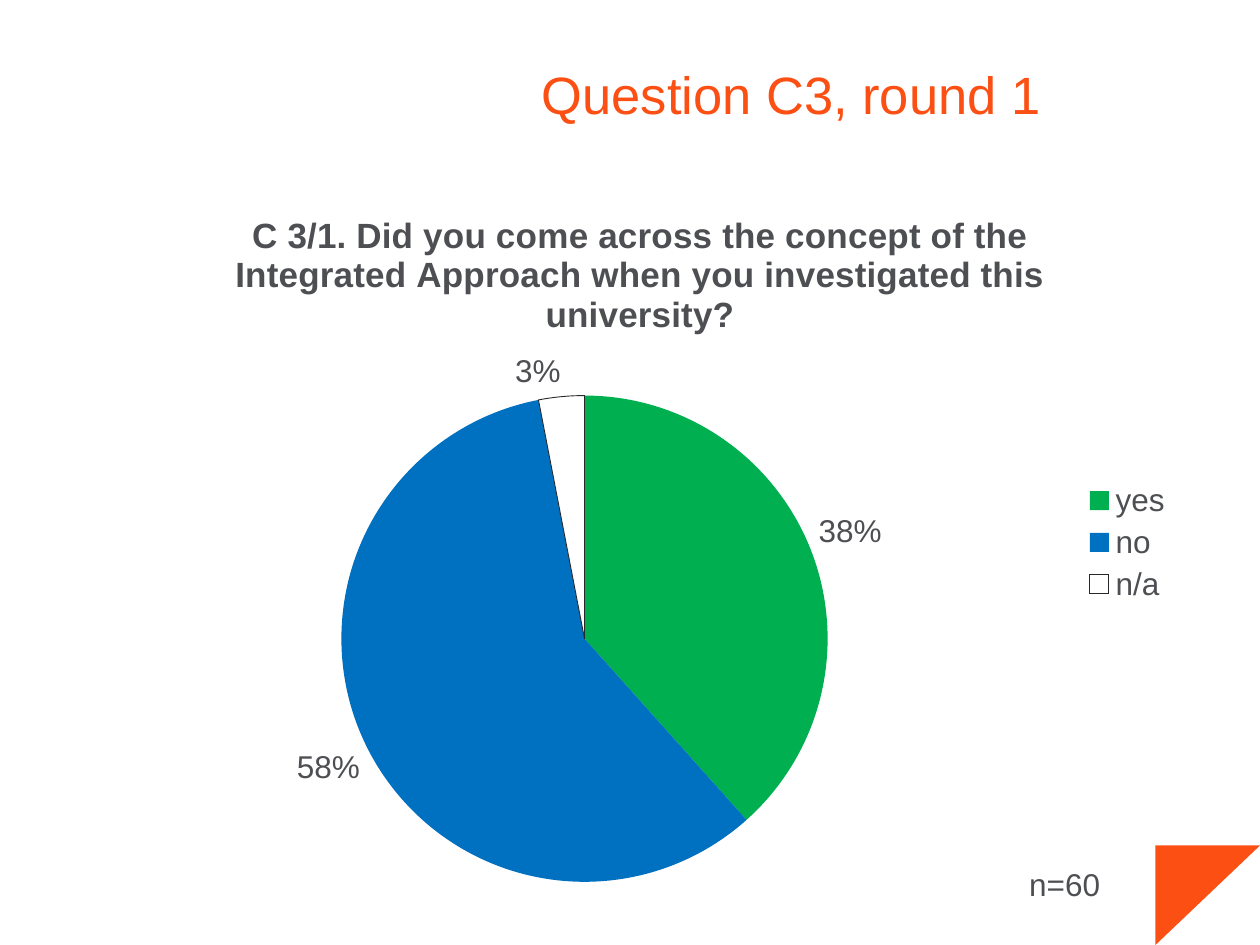
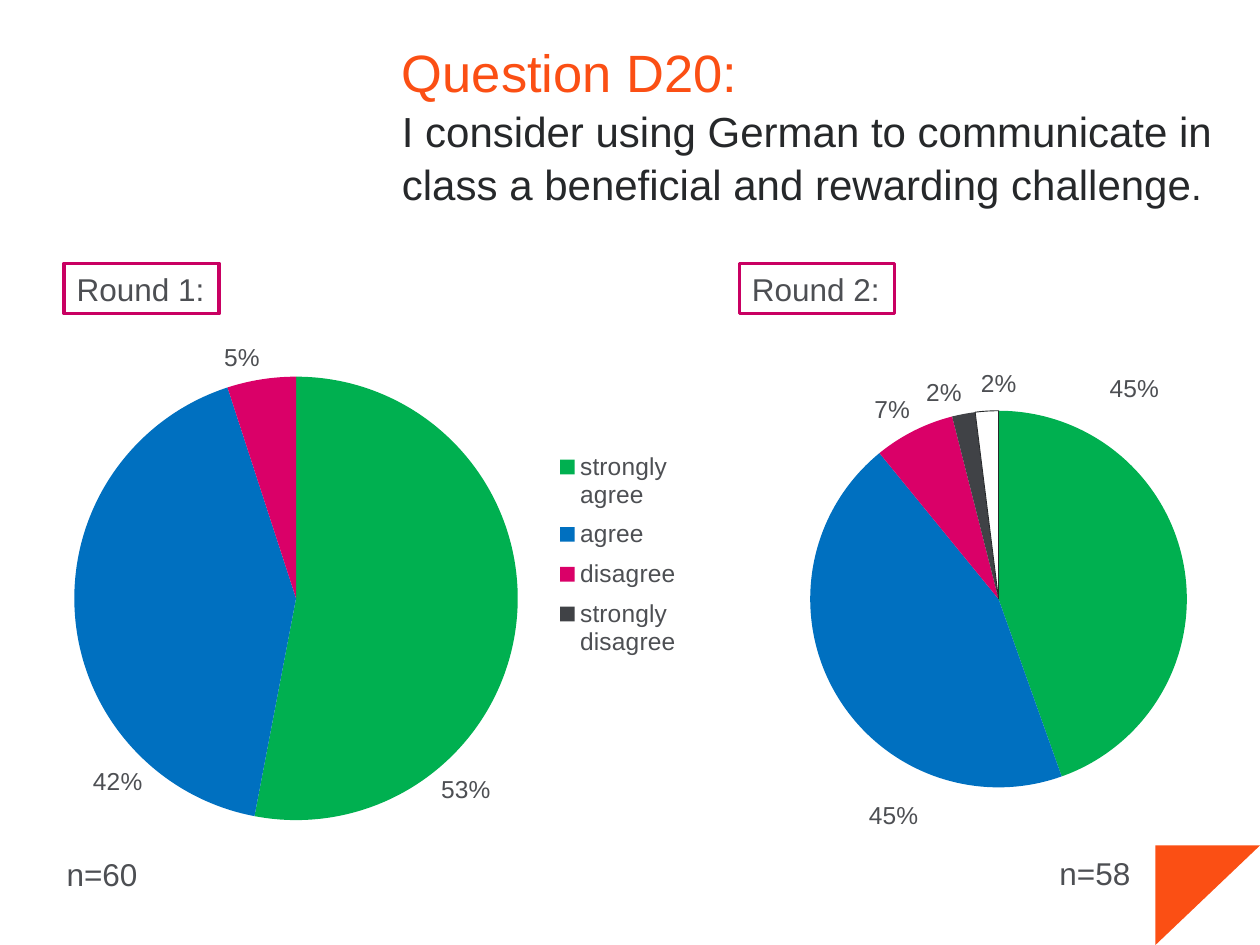
import copy

import lxml.etree
import pptx
import pptx.chart.data
import pptx.dml.color
import pptx.enum.chart
import pptx.enum.shapes
import pptx.enum.text
import pptx.oxml.ns
import pptx.util

Inches = pptx.util.Inches
Pt = pptx.util.Pt
RGBColor = pptx.dml.color.RGBColor
qn = pptx.oxml.ns.qn

ORANGE = RGBColor(0xFB, 0x4F, 0x14)
GRAY = RGBColor(0x4D, 0x4F, 0x53)
BLACK = RGBColor(0x26, 0x28, 0x2A)
FRAME = RGBColor(0xC9, 0x00, 0x62)
GREEN = RGBColor(0x00, 0xB0, 0x50)
BLUE = RGBColor(0x00, 0x70, 0xC0)
PINK = RGBColor(0xDA, 0x00, 0x68)
DARK = RGBColor(0x40, 0x42, 0x46)
WHITE = RGBColor(0xFF, 0xFF, 0xFF)

FONT = "Arial"
NOTE_SIZE = (0.77, 0.4)
ROUND_SIZE = (1.23, 0.4)

SLIDES = [
    {
        "title_area": (4.3, 0.47, 4.86, 0.56),
        "title": [[("Question C3, round 1", 30, ORANGE)]],
        "charts": [
            {
                "area": (0.75, 1.47, 8.66, 5.67),
                "pie": (2.71, 3.14, 3.86),
                "title": "C 3/1. Did you come across the concept of the Integrated "
                         "Approach when you investigated this university?",
                "answers": [("yes", 38, GREEN), ("no", 58, BLUE), ("n/a", 3, WHITE)],
                "label_size": 18,
                "legend_size": 18,
            },
        ],
        "rounds": [],
        "notes": [("n=60", 8.07, 6.82)],
    },
    {
        "title_area": (3.19, 0.29, 6.46, 1.5),
        "title": [
            [("Question D20:", 30, ORANGE)],
            [("I consider using German to communicate in class a beneficial "
              "and rewarding challenge", 24, BLACK), (".", 22, BLACK)],
        ],
        "charts": [
            {
                "area": (5.94, 2.57, 4.06, 4.09),
                "pie": (6.43, 3.26, 2.99),
                "answers": [("1", 45, GREEN), ("2", 45, BLUE), ("3", 7, PINK),
                            ("4", 2, DARK), ("5", 2, WHITE)],
                "label_size": 14,
                "label_shifts": {0: (-0.65, -1.29), 1: (0.72, 0.85), 4: (0.1, -0.05)},
            },
            {
                "area": (0, 2.57, 5.83, 4.1),
                "pie": (0.59, 2.99, 3.52),
                "answers": [("strongly agree", 53, GREEN), ("agree", 42, BLUE),
                            ("disagree", 5, PINK), ("strongly disagree", None, DARK)],
                "label_size": 14,
                "label_shifts": {0: (-0.66, 1.24), 1: (0.6, 1.34)},
                "legend_size": 14,
                "legend_area": (4.38, 3.5, 1.05, 1.8),
            },
        ],
        "rounds": [("Round 1:", 0.51, 2.09), ("Round 2:", 5.87, 2.09)],
        "notes": [("n=60", 0.43, 6.74), ("n=58", 8.31, 6.73)],
    },
]


def style_font(font, size, color=GRAY, bold=False):
    font.name = FONT
    font.size = Pt(size)
    font.bold = bold
    font.color.rgb = color


def add_corner(page):
    corner = page.shapes.add_shape(
        pptx.enum.shapes.MSO_SHAPE.RIGHT_TRIANGLE,
        Inches(9.19), Inches(6.69), Inches(0.79), Inches(0.83))
    corner.rotation = 90
    corner.shadow.inherit = False
    corner.fill.solid()
    corner.fill.fore_color.rgb = ORANGE
    corner.line.fill.background()


def add_title(page, area, lines):
    frame = page.shapes.add_textbox(*map(Inches, area)).text_frame
    frame.word_wrap = True
    frame.margin_left = frame.margin_right = frame.margin_top = frame.margin_bottom = 0
    para = frame.paragraphs[0]
    para.line_spacing = 1.05
    for number, line in enumerate(lines):
        if number:
            para.add_line_break()
        for text, size, color in line:
            span = para.add_run()
            span.text = text
            style_font(span.font, size, color)


def add_caption(page, text, left, top, size, framed=False):
    box = page.shapes.add_textbox(*map(Inches, (left, top, *size)))
    frame = box.text_frame
    frame.word_wrap = False
    frame.auto_size = pptx.enum.text.MSO_AUTO_SIZE.SHAPE_TO_FIT_TEXT
    frame.text = text
    style_font(frame.paragraphs[0].runs[0].font, 18)
    if framed:
        box.line.color.rgb = FRAME
        box.line.width = Pt(2)


def set_layout(parent, index, values, inner=False):
    for old in parent.findall(qn("c:layout")):
        parent.remove(old)
    layout = lxml.etree.Element(qn("c:layout"))
    manual = lxml.etree.SubElement(layout, qn("c:manualLayout"))
    settings = [("layoutTarget", "inner")] if inner else []
    if len(values) == 4:
        settings += [("xMode", "edge"), ("yMode", "edge")]
    settings += [(name, f"{value:.4f}") for name, value in zip("xywh", values)]
    for name, value in settings:
        lxml.etree.SubElement(manual, qn("c:" + name)).set("val", value)
    parent.insert(index, layout)


def share_of(area, part):
    left, top, width, height = area
    x, y, w, h = part
    return (x - left) / width, (y - top) / height, w / width, h / height


def style_labels(series, size, shifts, area):
    labels = series.data_labels
    labels.show_value = True
    labels.number_format = '0"%"'
    labels.number_format_is_linked = False
    labels.position = pptx.enum.chart.XL_LABEL_POSITION.OUTSIDE_END
    style_font(labels.font, size)
    group = series._element.find(qn("c:dLbls"))
    leader = group.find(qn("c:showLeaderLines"))
    if leader is not None:
        leader.set("val", "0")
    shared = [child for child in group if child is not leader]
    for place, (point, (across, down)) in enumerate(shifts.items()):
        label = lxml.etree.Element(qn("c:dLbl"))
        lxml.etree.SubElement(label, qn("c:idx")).set("val", str(point))
        set_layout(label, 1, (across / area[2], down / area[3]))
        label.extend(copy.deepcopy(shared))
        group.insert(place, label)


def add_pie(page, content):
    names, values, colors = zip(*content["answers"])
    data = pptx.chart.data.CategoryChartData()
    data.categories = names
    data.add_series("Series 1", values)
    area = content["area"]
    chart = page.shapes.add_chart(
        pptx.enum.chart.XL_CHART_TYPE.PIE, *map(Inches, area), data).chart
    style_font(chart.font, 18)

    chart.has_title = "title" in content
    if chart.has_title:
        frame = chart.chart_title.text_frame
        frame.text = content["title"]
        style_font(frame.paragraphs[0].runs[0].font, 20, bold=True)
        chart.chart_title.include_in_layout = False

    chart.has_legend = "legend_size" in content
    if chart.has_legend:
        legend = chart.legend
        legend.position = pptx.enum.chart.XL_LEGEND_POSITION.RIGHT
        legend.include_in_layout = False
        style_font(legend.font, content["legend_size"])
        if "legend_area" in content:
            set_layout(legend._element, 1, share_of(area, content["legend_area"]))

    plot = chart.plots[0]
    plot.vary_by_categories = True
    series = plot.series[0]
    for number, color in enumerate(colors):
        look = series.points[number].format
        look.fill.solid()
        look.fill.fore_color.rgb = color
        if color == WHITE:
            look.line.color.rgb = BLACK
            look.line.width = Pt(0.5)
        else:
            look.line.fill.background()
    style_labels(series, content["label_size"], content.get("label_shifts", {}), area)

    left, top, diameter = content["pie"]
    plot_area = chart._chartSpace.find(".//" + qn("c:plotArea"))
    set_layout(plot_area, 0, share_of(area, (left, top, diameter, diameter)), inner=True)


def main():
    deck = pptx.Presentation()
    deck.slide_width = Inches(10)
    deck.slide_height = Inches(7.5)
    for content in SLIDES:
        page = deck.slides.add_slide(deck.slide_layouts[6])
        add_corner(page)
        add_title(page, content["title_area"], content["title"])
        for pie in content["charts"]:
            add_pie(page, pie)
        for text, left, top in content["rounds"]:
            add_caption(page, text, left, top, ROUND_SIZE, framed=True)
        for text, left, top in content["notes"]:
            add_caption(page, text, left, top, NOTE_SIZE)
    deck.save("out.pptx")


if __name__ == "__main__":
    main()
